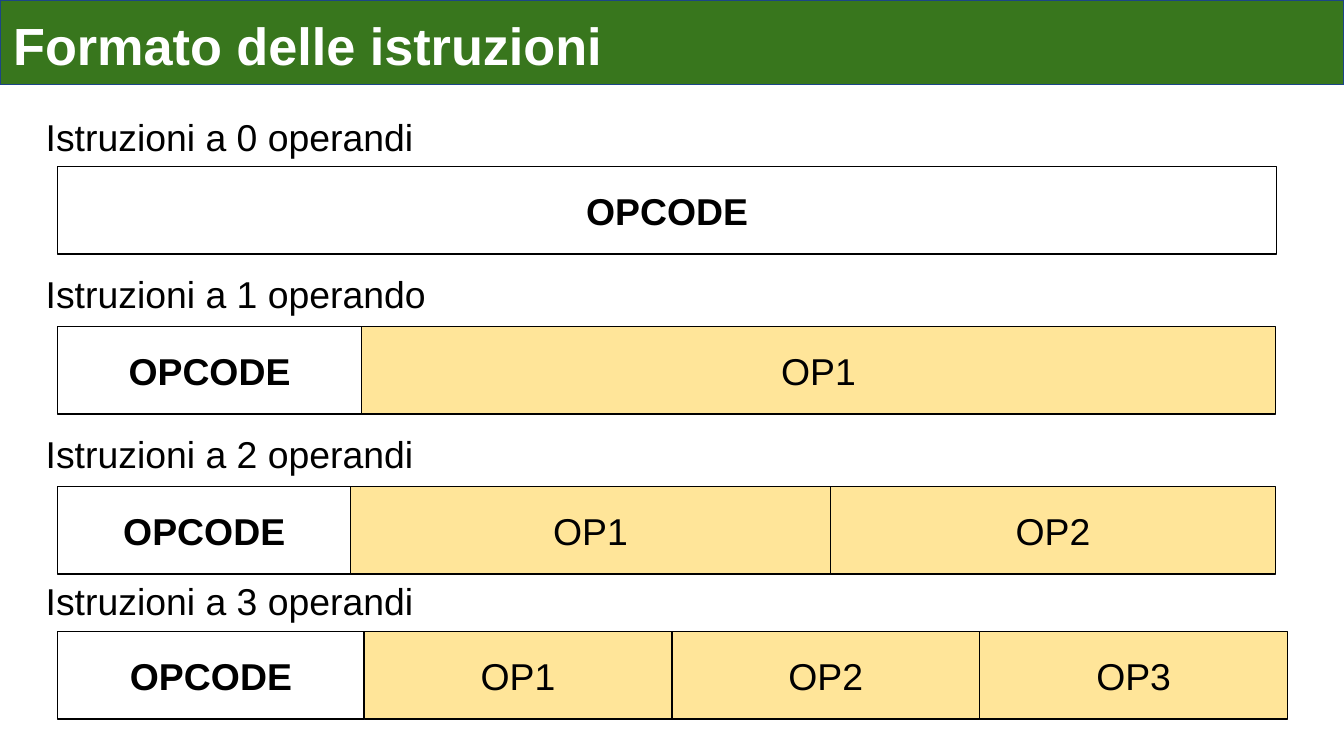
from dataclasses import dataclass

from pptx import Presentation
from pptx.dml.color import RGBColor
from pptx.enum.shapes import MSO_SHAPE
from pptx.enum.text import MSO_ANCHOR, PP_ALIGN
from pptx.util import Pt

RECT = MSO_SHAPE.RECTANGLE
TOP, MIDDLE = MSO_ANCHOR.TOP, MSO_ANCHOR.MIDDLE
LEFT, CENTER = PP_ALIGN.LEFT, PP_ALIGN.CENTER
PX = 9144


@dataclass(frozen=True)
class Theme:
    font: str = "Arial"
    title_size: int = 28
    body_size: int = 20
    line_width: float = 0.75
    header: str = "38761D"
    header_line: str = "1C4587"
    header_text: str = "FFFFFF"
    operand: str = "FFE599"
    ink: str = "000000"


THEME = Theme()


def write(s, text, size, color, bold=False, align=LEFT, anchor=TOP, insets=(9, 9)):
    tf = s.text_frame
    tf.word_wrap = True
    tf.vertical_anchor = anchor
    tf.margin_left = tf.margin_right = insets[0] * PX
    tf.margin_top = tf.margin_bottom = insets[1] * PX
    tf.text = text
    p = tf.paragraphs[0]
    p.alignment = align
    font = p.runs[0].font
    font.name, font.size, font.bold = THEME.font, Pt(size), bold
    font.color.rgb = RGBColor.from_string(color)


def add_box(slide, box, fill, line):
    s = slide.shapes.add_shape(RECT, *(v * PX for v in box))
    s.shadow.inherit = False
    if fill:
        s.fill.solid()
        s.fill.fore_color.rgb = RGBColor.from_string(fill)
    else:
        s.fill.background()
    s.line.color.rgb = RGBColor.from_string(line)
    s.line.width = Pt(THEME.line_width)
    return s


def add_header(slide, box, text):
    s = add_box(slide, box, THEME.header, THEME.header_line)
    write(s, text, THEME.title_size, THEME.header_text, bold=True, insets=(10, 10))


def add_label(slide, box, text):
    s = slide.shapes.add_textbox(*(v * PX for v in box))
    write(s, text, THEME.body_size, THEME.ink, insets=(9, 5))


def add_fields(slide, box, widths):
    x, y, _, height = box
    for i, width in enumerate(widths):
        s = add_box(slide, (x, y, width, height), THEME.operand if i else None, THEME.ink)
        write(s, f"OP{i}" if i else "OPCODE", THEME.body_size, THEME.ink,
              bold=i == 0, align=CENTER, anchor=MIDDLE)
        x += width


def add_format(slide, box, text, field_offset, widths):
    x, y, width, height = box
    add_label(slide, (x, y, 317, 33), text)
    add_fields(slide, (x + 18, y + field_offset, width - 18, height - field_offset), widths)


def main():
    prs = Presentation()
    prs.slide_width = 1000 * PX
    prs.slide_height = prs.slide_width * 9 // 16
    slide = prs.slides.add_slide(prs.slide_layouts[6])
    add_header(slide, (0, 0, 1000, 63), "Formato delle istruzioni")
    formats = [
        ("Istruzioni a 0 operandi", 80, 44, [907]),
        ("Istruzioni a 1 operando", 197, 46, [226, 680]),
        ("Istruzioni a 2 operandi", 316, 46, [218, 357, 331]),
        ("Istruzioni a 3 operandi", 425, 45, [228, 229, 229, 229]),
    ]
    for text, top, offset, widths in formats:
        add_format(slide, (25, top, 18 + sum(widths), offset + 65), text, offset, widths)
    prs.save("out.pptx")


if __name__ == "__main__":
    main()
